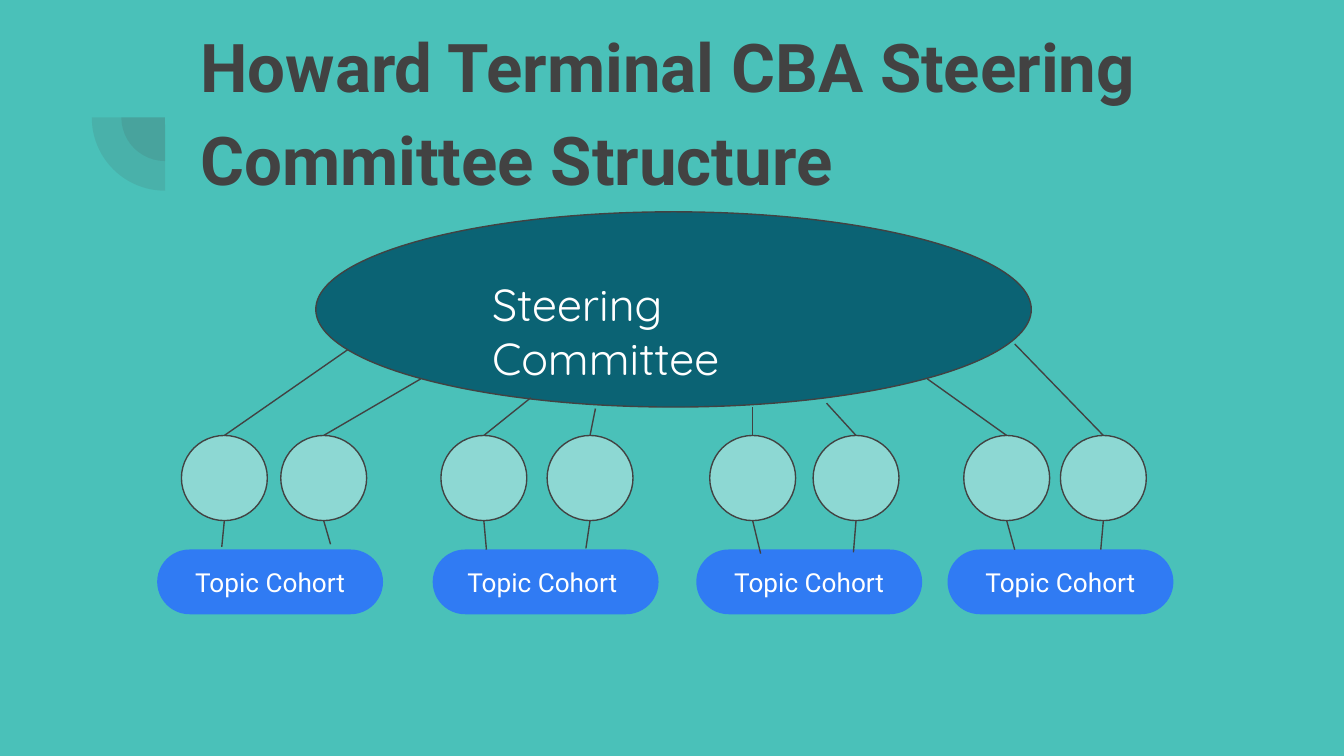
import pptx
import pptx.util
import pptx.dml.color
import pptx.enum.shapes
import pptx.enum.text
import pptx.oxml
import pptx.oxml.ns

Pt = pptx.util.Pt
KIND = pptx.enum.shapes.MSO_SHAPE
ALIGN = pptx.enum.text.PP_ALIGN
ANCHOR = pptx.enum.text.MSO_ANCHOR

# Content
TITLE = "Howard Terminal CBA Steering Committee Structure"
HUB = "Steering Committee"
COHORTS = [  # left edge, label
    (84.2, "Topic Cohort"),
    (231.8, "Topic Cohort "),
    (373, "Topic Cohort"),
    (507.6, "Topic Cohort"),
]
MEMBERS = [  # centre x, end of line to hub, end of line to cohort
    (120.2, (186.5, 187.2), (118.8, 293)),
    (173.4, (225.4, 203), (177.1, 291.6)),
    (259.2, (284.4, 213.1), (260.6, 294.5)),
    (316.1, (319, 218.9), (313.9, 293.8)),
    (403.2, (403.2, 218.2), (407.5, 296.6)),
    (458.6, (442.8, 216), (457.2, 295.9)),
    (539.3, (496.8, 203), (543.6, 294.5)),
    (591.1, (543.6, 184.3), (589.7, 294.5)),
]

# Theme
THEME = {
    "back": "4AC1B9", "ink": "424242", "hub": "0B6374",
    "disc": "8DD8D3", "pill": "307BF3", "light": "FFFFFF",
    "head": {"name": "Roboto", "size": Pt(36), "bold": True},
    "label": {"name": "Roboto", "size": Pt(14)},
    "core": {"name": "Quicksand", "size": Pt(24)},
    "line": 0.75, "inset": 7.2, "alpha": 12000,
}

# Layout
DISC_W, DISC_H, DISC_TOP = 46, 45.6, 233.3
PILL_W, PILL_H, PILL_TOP = 121, 34.7, 294.4
PIE_X, PIE_Y = 88.4, 62.9  # shared centre of the quarter discs


def tint(key):
    return pptx.dml.color.RGBColor.from_string(THEME[key])


def assign(item, values):
    for name, value in values.items():
        setattr(item, name, value)


def place(item, box):
    assign(item, dict(zip(("left", "top", "width", "height"), map(Pt, box))))


def write(shape, text, font, color, anchor=ANCHOR.TOP, **para):
    frame = shape.text_frame
    inset = Pt(THEME["inset"])
    assign(frame, {
        "word_wrap": True, "vertical_anchor": anchor,
        "auto_size": pptx.enum.text.MSO_AUTO_SIZE.NONE,
        "margin_left": inset, "margin_right": inset,
        "margin_top": inset, "margin_bottom": inset,
    })
    first = frame.paragraphs[0]
    assign(first, {"alignment": ALIGN.LEFT, **para})
    run = first.add_run()
    run.text = text
    assign(run.font, THEME[font])
    run.font.color.rgb = tint(color)


def stroke(item):
    item.line.color.rgb = tint("ink")
    item.line.width = Pt(THEME["line"])


def draw(slide, kind, box, color, edged=False):
    shape = slide.shapes.add_shape(kind, *map(Pt, box))
    shape.shadow.inherit = False
    shape.fill.solid()
    shape.fill.fore_color.rgb = tint(color)
    if edged:
        stroke(shape)
    else:
        shape.line.fill.background()
    return shape


def link(slide, start, end):
    line = slide.shapes.add_connector(
        pptx.enum.shapes.MSO_CONNECTOR.STRAIGHT, *map(Pt, (*start, *end)))
    stroke(line)
    props = line._element.spPr
    props.append(pptx.oxml.parse_xml(
        "<a:effectLst %s/>" % pptx.oxml.ns.nsdecls("a")))


def main():
    deck = pptx.Presentation()
    assign(deck, {"slide_width": Pt(720), "slide_height": Pt(405)})
    slide = deck.slides.add_slide(deck.slide_layouts[5])
    slide.background.fill.solid()
    slide.background.fill.fore_color.rgb = tint("back")

    # Faint quarter discs beside the title
    for size in (46.8, 78.5):
        box = (PIE_X - size / 2, PIE_Y - size / 2, size, size)
        pie = draw(slide, KIND.PIE, box, "ink")
        pie.rotation = 270
        pie.adjustments[0], pie.adjustments[1] = 107.93, 162
        color = pie._element.spPr.find(".//" + pptx.oxml.ns.qn("a:srgbClr"))
        color.append(pptx.oxml.parse_xml('<a:alpha %s val="%d"/>' % (
            pptx.oxml.ns.nsdecls("a"), THEME["alpha"])))

    # Title
    title = slide.shapes.title
    place(title, (100.1, 0, 553.7, 78.5))
    write(title, TITLE, "head", "ink", line_spacing=1.15, space_before=Pt(12))

    # Topic cohorts
    for left, label in COHORTS:
        pill = draw(slide, KIND.ROUNDED_RECTANGLE,
                    (left, PILL_TOP, PILL_W, PILL_H), "pill")
        pill.adjustments[0] = 0.5
        write(pill, label, "label", "light", ANCHOR.MIDDLE,
              alignment=ALIGN.CENTER)

    # Members and their lines down to the cohorts
    for mid, _, foot in MEMBERS:
        draw(slide, KIND.FLOWCHART_CONNECTOR,
             (mid - DISC_W / 2, DISC_TOP, DISC_W, DISC_H), "disc", True)
        link(slide, (mid, DISC_TOP + DISC_H), foot)

    # Steering committee hub
    draw(slide, KIND.OVAL, (169.2, 113.5, 383.3, 104.6), "hub", True)
    box = slide.shapes.add_textbox(*map(Pt, (256.5, 141.1, 229.7, 50.4)))
    write(box, HUB, "core", "light")

    # Lines from the members up to the hub
    for mid, top, _ in MEMBERS:
        link(slide, (mid, DISC_TOP), top)

    deck.save("out.pptx")


if __name__ == "__main__":
    main()
